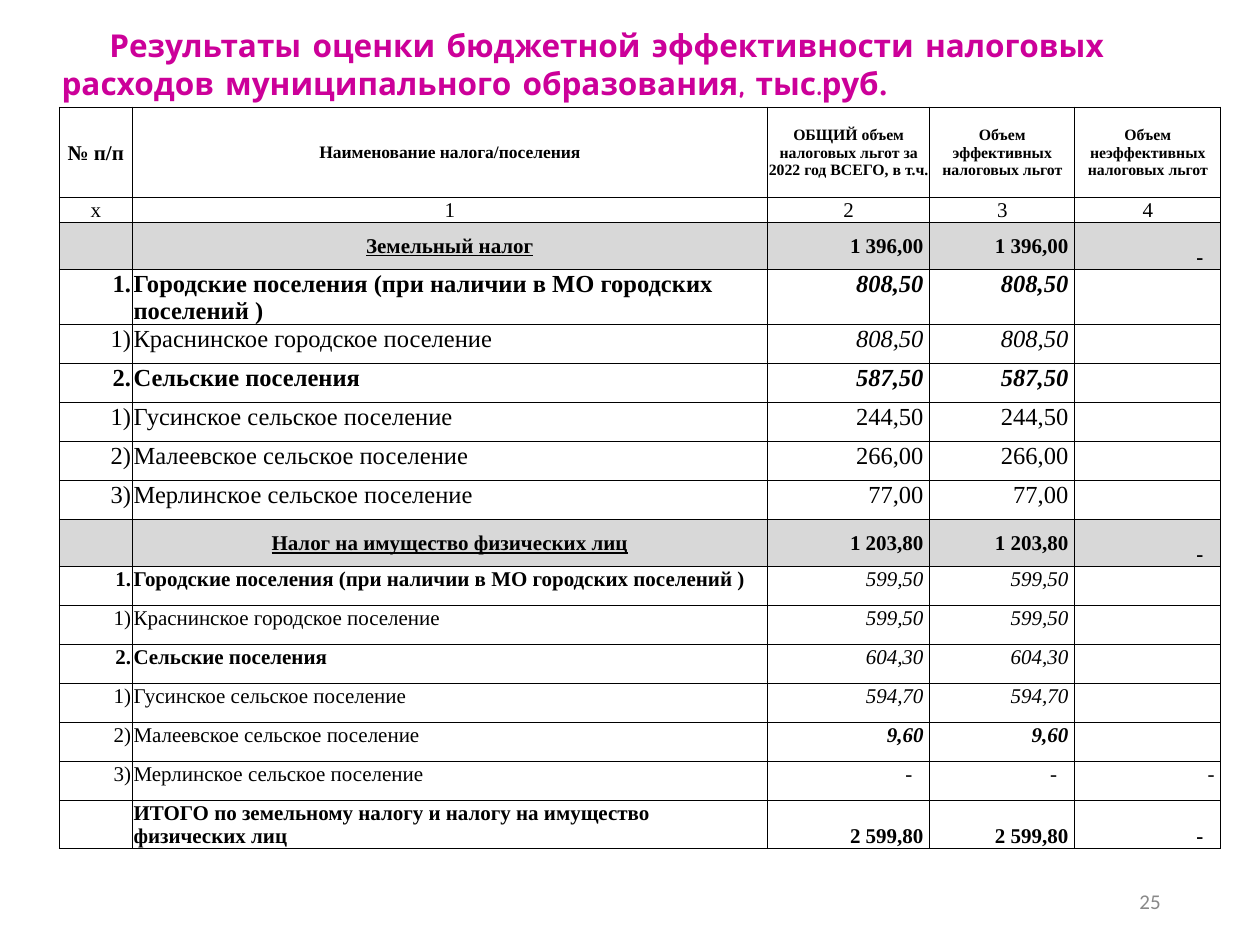
from dataclasses import dataclass, field

from lxml.etree import SubElement, Element
from pptx import Presentation
from pptx.dml.color import RGBColor
from pptx.enum.text import MSO_ANCHOR, PP_ALIGN
from pptx.oxml.ns import qn
from pptx.slide import Slide
from pptx.table import Table, _Cell
from pptx.text.text import _Paragraph
from pptx.util import Inches, Pt

COLORS = {"ink": "000000", "title": "CC0099", "band": "D8D8D8", "number": "898989"}
SERIF = "Times New Roman"
COLUMN_WIDTHS = (0.58, 5.04, 1.29, 1.15, 1.16)
HEADERS = (
    ("№ п/п", 12),
    ("Наименование налога/поселения", 10),
    ("ОБЩИЙ объем налоговых льгот за 2022 год ВСЕГО, в т.ч.", 9),
    ("Объем эффективных налоговых льгот", 9),
    ("Объем неэффективных налоговых льгот", 9),
)
URBAN = "Городские поселения (при наличии в МО городских поселений )"
RURAL = "Сельские поселения"
KRASNY = "Краснинское городское поселение"
GUSINO = "Гусинское сельское поселение"
MALEEVO = "Малеевское сельское поселение"
MERLINO = "Мерлинское сельское поселение"
BOLD = {"bold": True}
ITALIC = {"italic": True}
BOLD_ITALIC = {**BOLD, **ITALIC}


@dataclass
class CellText:
    text: str
    size: float = 12
    align: PP_ALIGN = PP_ALIGN.CENTER
    anchor: MSO_ANCHOR = MSO_ANCHOR.MIDDLE
    right: float = 0.01
    fill: str = ""
    style: dict = field(default_factory=dict)


@dataclass
class TaxLine:
    number: str
    name: str
    amount: str
    size: float
    name_style: dict = field(default_factory=dict)
    amount_style: dict = field(default_factory=dict)
    ineffective: str = ""
    height: float = 0.31

    def cells(self) -> list[CellText]:
        label = {"size": self.size, "anchor": MSO_ANCHOR.TOP, "style": self.name_style}
        value = {**label, "align": PP_ALIGN.RIGHT, "style": self.amount_style}
        amount = CellText(self.amount, right=0.14 if self.amount == "-" else 0.05, **value)
        return [
            CellText(self.number, align=PP_ALIGN.RIGHT, **label),
            CellText(self.name, align=PP_ALIGN.LEFT, **label),
            amount,
            amount,
            CellText(self.ineffective, right=0.05, **value),
        ]


@dataclass
class SumLine:
    name: str
    amount: str
    height: float
    anchor: MSO_ANCHOR = MSO_ANCHOR.MIDDLE
    align: PP_ALIGN = PP_ALIGN.CENTER
    fill: str = "band"
    underline: bool = True

    def cells(self) -> list[CellText]:
        common = {"fill": self.fill, "anchor": self.anchor}
        amount = CellText(self.amount, align=PP_ALIGN.RIGHT, right=0.05, style=BOLD, **common)
        dash = {**common, "anchor": MSO_ANCHOR.BOTTOM}
        return [
            CellText("", **common),
            CellText(self.name, align=self.align,
                     style={**BOLD, "underline": self.underline}, **common),
            amount,
            amount,
            CellText("-", align=PP_ALIGN.RIGHT, right=0.14, style=BOLD, **dash),
        ]


LINES = (
    SumLine("Земельный налог", "1 396,00", 0.37),
    TaxLine("1.", URBAN, "808,50", 14, BOLD, BOLD_ITALIC, height=0.44),
    TaxLine("1)", KRASNY, "808,50", 14, amount_style=ITALIC),
    TaxLine("2.", RURAL, "587,50", 14, BOLD, BOLD_ITALIC),
    TaxLine("1)", GUSINO, "244,50", 14),
    TaxLine("2)", MALEEVO, "266,00", 14),
    TaxLine("3)", MERLINO, "77,00", 14),
    SumLine("Налог на имущество физических лиц", "1 203,80", 0.37),
    TaxLine("1.", URBAN, "599,50", 12, BOLD, ITALIC),
    TaxLine("1)", KRASNY, "599,50", 12, amount_style=ITALIC),
    TaxLine("2.", RURAL, "604,30", 12, BOLD, ITALIC),
    TaxLine("1)", GUSINO, "594,70", 12, amount_style=ITALIC),
    TaxLine("2)", MALEEVO, "9,60", 12, amount_style=BOLD_ITALIC),
    TaxLine("3)", MERLINO, "-", 12, ineffective="-"),
    SumLine("ИТОГО по земельному налогу и налогу на имущество физических лиц",
            "2 599,80", 0.38, MSO_ANCHOR.BOTTOM, PP_ALIGN.LEFT, "", False),
)


def set_values(target: object, values: dict) -> None:
    for name, value in values.items():
        setattr(target, name, value)


def add_run(paragraph: _Paragraph, text: str, name: str, size: float, color: str,
            style: dict) -> None:
    run = paragraph.add_run()
    run.text = text
    set_values(run.font, {"name": name, "size": Pt(size), **style})
    run.font.color.rgb = RGBColor.from_string(COLORS[color])


def add_borders(cell: _Cell) -> None:
    properties = cell._tc.get_or_add_tcPr()
    for position, side in enumerate(("lnL", "lnR", "lnT", "lnB")):
        line = Element(qn(f"a:{side}"), w=str(Pt(0.5)))
        fill = SubElement(line, qn("a:solidFill"))
        SubElement(fill, qn("a:srgbClr"), val=COLORS["ink"])
        properties.insert(position, line)


def fill_cell(cell: _Cell, content: CellText) -> None:
    set_values(cell, {
        "margin_left": Inches(0.01),
        "margin_right": Inches(content.right),
        "margin_top": Inches(0.01),
        "margin_bottom": 0,
        "vertical_anchor": content.anchor,
    })
    if content.fill:
        cell.fill.solid()
        cell.fill.fore_color.rgb = RGBColor.from_string(COLORS[content.fill])
    else:
        cell.fill.background()
    add_borders(cell)
    paragraph = cell.text_frame.paragraphs[0]
    paragraph.alignment = content.align
    if content.text:
        add_run(paragraph, content.text, SERIF, content.size, "ink",
                {"bold": False, **content.style})
    else:
        SubElement(paragraph._p, qn("a:endParaRPr"), sz=str(content.size * 100))


def fill_row(table: Table, index: int, height: float, cells: list[CellText]) -> None:
    table.rows[index].height = Inches(height)
    for column, content in enumerate(cells):
        fill_cell(table.cell(index, column), content)


def add_tax_table(slide: Slide) -> None:
    table = slide.shapes.add_table(
        len(LINES) + 2, len(COLUMN_WIDTHS),
        Inches(0.47), Inches(0.85), Inches(9.22), Inches(5.88),
    ).table
    set_values(table, {"first_row": False, "horz_banding": False})
    for column, width in zip(table.columns, COLUMN_WIDTHS):
        column.width = Inches(width)
    fill_row(table, 0, 0.72, [CellText(text, size, style=BOLD) for text, size in HEADERS])
    fill_row(table, 1, 0.19, [CellText(text) for text in "х1234"])
    for index, line in enumerate(LINES, 2):
        fill_row(table, index, line.height, line.cells())


def add_text(slide: Slide, box: tuple, anchor: MSO_ANCHOR, align: PP_ALIGN) -> _Paragraph:
    frame = slide.shapes.add_textbox(*map(Inches, box)).text_frame
    set_values(frame, {"word_wrap": True, "vertical_anchor": anchor})
    paragraph = frame.paragraphs[0]
    paragraph.alignment = align
    return paragraph


def main() -> None:
    presentation = Presentation()
    set_values(presentation, {"slide_width": Inches(10), "slide_height": Inches(7.5)})
    slide = presentation.slides.add_slide(presentation.slide_layouts[6])
    add_tax_table(slide)
    number = add_text(slide, (7.06, 6.95, 2.25, 0.4), MSO_ANCHOR.MIDDLE, PP_ALIGN.RIGHT)
    add_run(number, "25", "Calibri", 12, "number", {})
    title = add_text(slide, (0.39, 0.16, 9.14, 0.71), MSO_ANCHOR.TOP, PP_ALIGN.LEFT)
    title._p.get_or_add_pPr().set("indent", str(Inches(0.38)))
    add_run(title, "Результаты оценки бюджетной эффективности налоговых расходов "
            "муниципального образования, тыс.руб", "Comic Neue", 18, "title", BOLD)
    add_run(title, ".", SERIF, 18, "title", BOLD)
    presentation.save("out.pptx")


if __name__ == "__main__":
    main()
